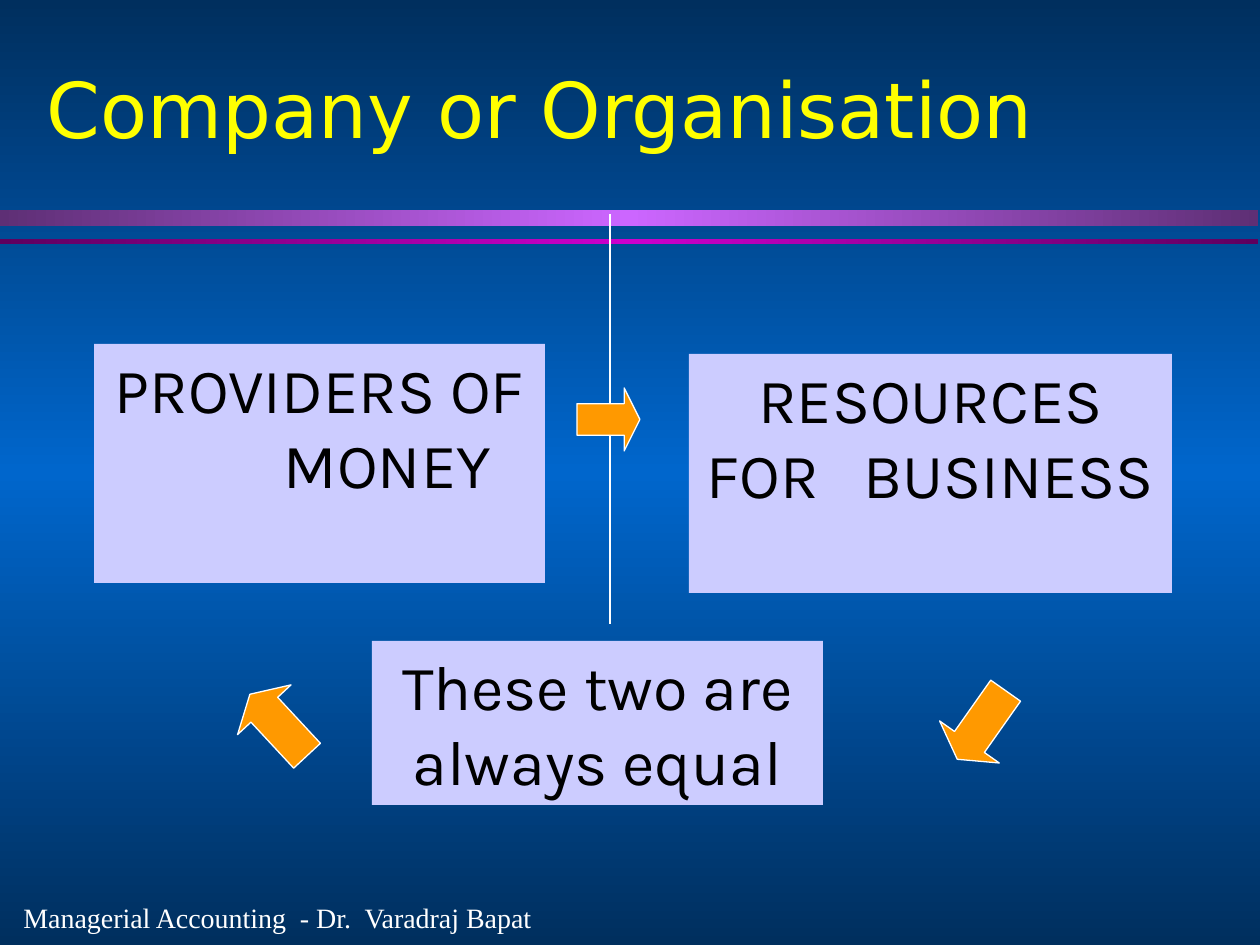
from dataclasses import dataclass

from lxml import etree
from pptx import Presentation
from pptx.dml.color import RGBColor
from pptx.enum import shapes, text
from pptx.oxml import ns
from pptx.util import Emu, Pt

PX = 914400 // 126  # EMU in one px
SHAPE = shapes.MSO_SHAPE
ALIGN = text.PP_ALIGN
ANCHOR = text.MSO_ANCHOR


@dataclass(frozen=True)
class Theme:
    sky: tuple = ("002F5E", "0066CC")  # edge, middle
    violet: tuple = ("5E2F75", "CC66FF")
    magenta: tuple = ("5E005E", "CC00CC")
    box: str = "CCCCFF"
    arrow: str = "FF9900"
    white: str = "FFFFFF"
    yellow: str = "FFFF00"
    black: str = "000000"
    title_font: str = "DejaVu Sans"
    body_font: str = "Karla"
    footer_font: str = "Times New Roman"
    title_size: int = 44
    body_size: int = 36
    footer_size: int = 16
    line_width: float = 0.75


THEME = Theme()


def px(*lengths):
    return [Emu(length * PX) for length in lengths]


def mirrored_gradient(fill, colours, angle):
    """Fade from the edge colour to the middle one and back."""
    edge, middle = colours
    fill.gradient()
    fill.gradient_angle = angle
    stops = fill._fill._gradFill.find(ns.qn("a:gsLst"))
    for stop in list(stops):
        stops.remove(stop)
    for position, colour in ((0, edge), (50000, middle), (100000, edge)):
        stop = etree.SubElement(stops, ns.qn("a:gs"), pos=str(position))
        etree.SubElement(stop, ns.qn("a:srgbClr"), val=colour)


def write(frame, lines, *, font, size, colour, align=ALIGN.CENTER,
          anchor=ANCHOR.TOP, wrap=True, before=0, indents=()):
    """Write one paragraph a line; before is a percentage above the first."""
    frame.word_wrap = wrap
    frame.vertical_anchor = anchor
    for index, line in enumerate(lines):
        paragraph = frame.paragraphs[0] if index == 0 else frame.add_paragraph()
        paragraph.alignment = align
        props = paragraph._p.get_or_add_pPr()
        if indents:
            props.set("marL", str(indents[index] * PX))
            props.set("indent", "0")
        if before and index == 0:
            spacing = etree.SubElement(props, ns.qn("a:spcBef"))
            etree.SubElement(spacing, ns.qn("a:spcPct"), val=str(before * 1000))
        run = paragraph.add_run()
        run.text = line
        run.font.name = font
        run.font.size = Pt(size)
        run.font.color.rgb = RGBColor.from_string(colour)


def add_block(slide, kind, area, fill=None, outline=None):
    block = slide.shapes.add_shape(kind, *px(*area))
    block.shadow.inherit = False
    if fill:
        block.fill.solid()
        block.fill.fore_color.rgb = RGBColor.from_string(fill)
    if outline:
        block.line.color.rgb = RGBColor.from_string(outline)
        block.line.width = Pt(THEME.line_width)
    else:
        block.line.fill.background()
    return block


def add_bar(slide, top, height, colours):
    bar = add_block(slide, SHAPE.RECTANGLE, (0, top, 1258, height))
    mirrored_gradient(bar.fill, colours, 0)


def add_title(slide, title):
    holder = slide.shapes.title
    holder.left, holder.top, holder.width, holder.height = px(34, 55, 1013, 105)
    write(holder.text_frame, [title], font=THEME.title_font, size=THEME.title_size,
          colour=THEME.yellow, anchor=ANCHOR.MIDDLE, wrap=False)


def add_footer(slide, line):
    footer = slide.shapes.add_textbox(*px(11, 895, 735, 45))
    write(footer.text_frame, [line], font=THEME.footer_font, size=THEME.footer_size,
          colour=THEME.white, align=ALIGN.LEFT, anchor=ANCHOR.MIDDLE, before=50)


def add_divider(slide, x, top, bottom):
    divider = slide.shapes.add_connector(
        shapes.MSO_CONNECTOR.STRAIGHT, *px(x, top, x, bottom))
    divider.line.color.rgb = RGBColor.from_string(THEME.white)
    divider.line.width = Pt(THEME.line_width)
    etree.SubElement(divider._element.spPr, ns.qn("a:effectLst"))


def add_arrow(slide, kind, area, head, rotation=0):
    arrow = add_block(slide, kind, area, THEME.arrow, THEME.white)
    arrow.adjustments[0] = 0.5
    arrow.adjustments[1] = head
    arrow.rotation = rotation


def add_box(slide, area, lines, indents=()):
    box = add_block(slide, SHAPE.RECTANGLE, area, THEME.box)
    write(box.text_frame, lines, font=THEME.body_font, size=THEME.body_size,
          colour=THEME.black, before=50, indents=indents)


def main():
    deck = Presentation()
    deck.slide_width, deck.slide_height = px(1260, 945)
    slide = deck.slides.add_slide(deck.slide_layouts[5])

    # Backdrop, bars and footer
    mirrored_gradient(slide.background.fill, THEME.sky, 270)
    add_bar(slide, 210, 16, THEME.violet)
    add_bar(slide, 239, 5, THEME.magenta)
    add_footer(slide, "Managerial Accounting  - Dr.  Varadraj Bapat")
    add_title(slide, "Company or Organisation")

    # Cycle between the two sides
    add_divider(slide, 610, 214, 624)
    add_arrow(slide, SHAPE.RIGHT_ARROW, (577, 388, 63, 63), 0.25)
    for left, rotation in ((945, 35.2), (242, 137.1)):
        add_arrow(slide, SHAPE.DOWN_ARROW, (left, 683, 73, 84), 0.29, rotation)

    # Boxes
    add_box(slide, (372, 641, 451, 164), ["These two are always equal"])
    add_box(slide, (689, 354, 483, 239), ["RESOURCES FOR   BUSINESS"])
    add_box(slide, (94, 344, 451, 239), ["PROVIDERS OF", "MONEY"], indents=(0, 136))

    deck.save("out.pptx")


if __name__ == "__main__":
    main()
